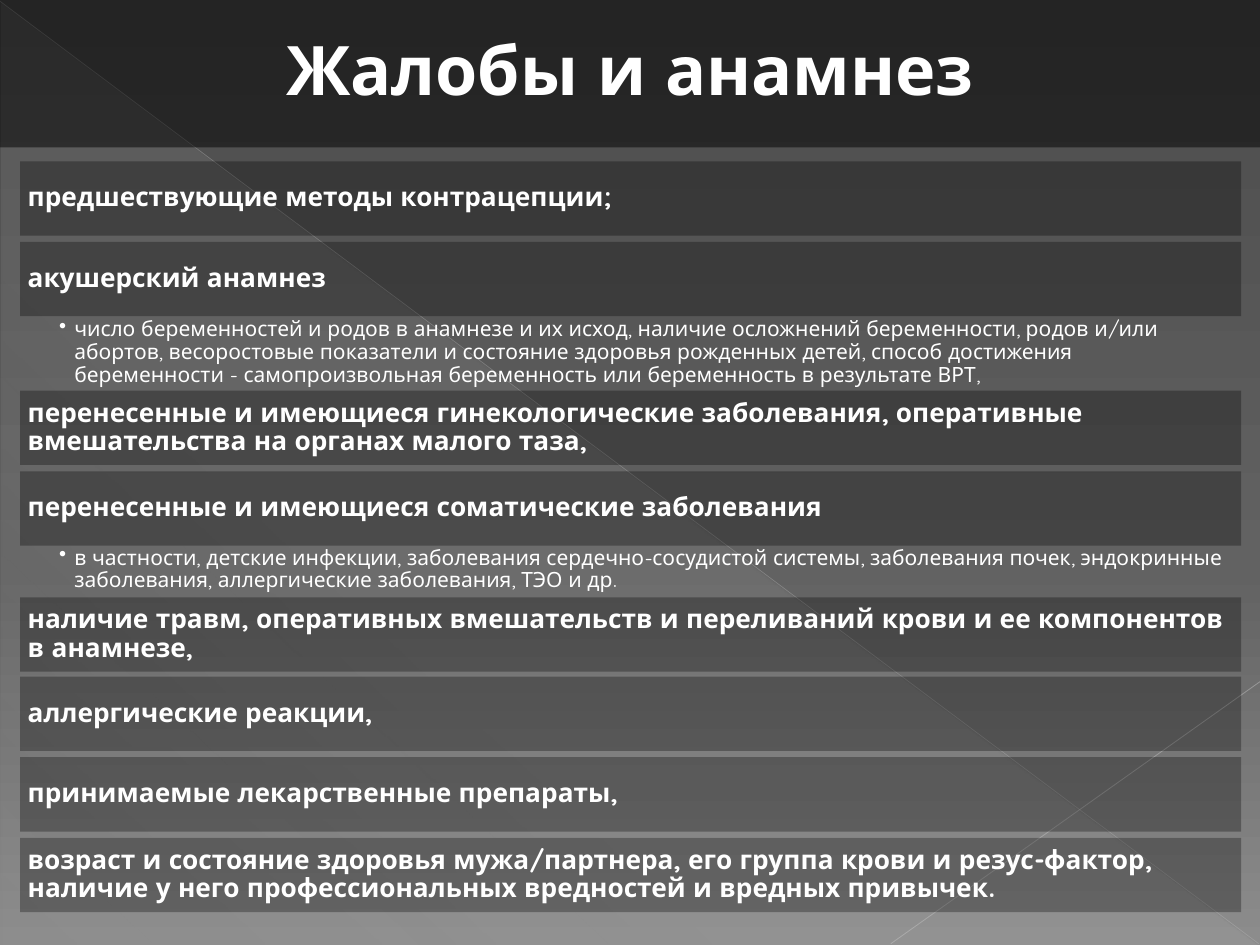
import pptx
import pptx.util
import pptx.dml.color
import pptx.enum.shapes
import pptx.enum.text
import pptx.oxml
import pptx.oxml.ns
from pptx.util import Inches

RGBColor = pptx.dml.color.RGBColor
WHITE = RGBColor(0xFF, 0xFF, 0xFF)
BLACK = RGBColor(0x00, 0x00, 0x00)
DARK_GRAY = RGBColor(0x4A, 0x4A, 0x4A)
MID_GRAY = RGBColor(0x62, 0x62, 0x62)
LIGHT_GRAY = RGBColor(0x8C, 0x8C, 0x8C)
SHEEN = RGBColor(0xD2, 0xD2, 0xD2)
LONG_RAY = RGBColor(0xBF, 0xBF, 0xBF)
SHORT_RAY = RGBColor(0xC6, 0xC6, 0xC6)

FONT = "Quicksand"
LEFT, WIDTH, BAR_HEIGHT = 0.16, 9.69, 0.59
RECTANGLE = pptx.enum.shapes.MSO_SHAPE.RECTANGLE
qn = pptx.oxml.ns.qn


def write_text(shape, text, size, bold=True, align="LEFT", anchor="MIDDLE",
               insets=(0.06, 0.06, 0.06, 0.06), bullet_indent=None):
    frame = shape.text_frame
    frame.word_wrap = True
    frame.vertical_anchor = getattr(pptx.enum.text.MSO_ANCHOR, anchor)
    frame.margin_left, frame.margin_top, frame.margin_right, frame.margin_bottom = map(Inches, insets)
    paragraph = frame.paragraphs[0]
    paragraph.alignment = getattr(pptx.enum.text.PP_ALIGN, align)
    paragraph.line_spacing = 0.9
    run = paragraph.add_run()
    run.text = text
    run.font.name = FONT
    run.font.size = pptx.util.Pt(size)
    run.font.bold = bold
    run.font.color.rgb = WHITE
    if bullet_indent:
        properties = paragraph._p.get_or_add_pPr()
        properties.set("marL", str(Inches(bullet_indent)))
        properties.set("indent", str(-Inches(bullet_indent)))
        properties.append(pptx.oxml.parse_xml(
            f'<a:buChar {pptx.oxml.ns.nsdecls("a")} char="•"/>'))


def set_gradient(fill, element, angle, stops):
    fill.gradient()
    gradient = next(element.iter(qn("a:gradFill")))
    stop_xml = "".join(
        f'<a:gs pos="{position * 1000}"><a:srgbClr val="{color}">'
        f'<a:alpha val="{opacity * 1000}"/></a:srgbClr></a:gs>'
        for position, color, opacity in stops)
    gradient.replace(gradient.find(qn("a:gsLst")), pptx.oxml.parse_xml(
        f'<a:gsLst {pptx.oxml.ns.nsdecls("a")}>{stop_xml}</a:gsLst>'))
    gradient.find(qn("a:lin")).set("ang", str(angle * 60000))


presentation = pptx.Presentation()
presentation.slide_width = Inches(10)
presentation.slide_height = Inches(7.5)
slide = presentation.slides.add_slide(presentation.slide_layouts[6])
shapes = slide.shapes
translucent = []

set_gradient(slide.background.fill, slide._element, 90,
             [(0, DARK_GRAY, 100), (60, MID_GRAY, 100), (100, LIGHT_GRAY, 100)])

sheen = shapes.add_shape(pptx.enum.shapes.MSO_SHAPE.RIGHT_TRIANGLE,
                         Inches(0.01), Inches(0.02), Inches(9.98), Inches(7.48))
sheen.shadow.inherit = False
sheen.line.fill.background()
set_gradient(sheen.fill, sheen._element, 133,
             [(0, SHEEN, 10), (70, SHEEN, 8), (100, SHEEN, 1)])

rays = [
    ((0, 0.01, 9.99, 7.49), LONG_RAY, 0.39, 35),
    ((10, 5.41, 7.07, 7.49), SHORT_RAY, 0.47, 45),
]
for ends, color, weight, opacity in rays:
    ray = shapes.add_connector(pptx.enum.shapes.MSO_CONNECTOR.STRAIGHT, *map(Inches, ends))
    ray.line.color.rgb = color
    ray.line.width = pptx.util.Pt(weight)
    ray._element.spPr.append(pptx.oxml.parse_xml(
        f'<a:effectLst {pptx.oxml.ns.nsdecls("a")}/>'))
    translucent.append((ray, opacity))

topics = [
    (1.28, "предшествующие методы контрацепции;"),
    (1.92, "акушерский анамнез"),
    (3.1, "перенесенные и имеющиеся гинекологические заболевания, оперативные вмешательства на органах малого таза,"),
    (3.74, "перенесенные и имеющиеся соматические заболевания"),
    (4.74, "наличие травм, оперативных вмешательств и переливаний крови и ее компонентов в анамнезе,"),
    (5.37, "аллергические реакции,"),
    (6.01, "принимаемые лекарственные препараты,"),
    (6.65, "возраст и состояние здоровья мужа/партнера, его группа крови и резус-фактор, наличие у него профессиональных вредностей и вредных привычек."),
]
bands = [(LEFT, top, WIDTH, BAR_HEIGHT, 30, text, {"size": 15}) for top, text in topics]
bands.append((0, 0, 10, 1.17, 50, "Жалобы и анамнез",
              {"size": 39, "align": "CENTER", "insets": (0.16, 0.16, 0.16, 0.16)}))
for left, top, width, height, opacity, text, text_format in bands:
    band = shapes.add_shape(RECTANGLE, Inches(left), Inches(top), Inches(width), Inches(height))
    band.shadow.inherit = False
    band.fill.solid()
    band.fill.fore_color.rgb = BLACK
    band.line.fill.background()
    write_text(band, text, **text_format)
    translucent.append((band, opacity))

details = [
    (2.51, 0.59, "число беременностей и родов в анамнезе и их исход, наличие осложнений беременности, родов и/или абортов, весоростовые показатели и состояние здоровья рожденных детей, способ достижения беременности - самопроизвольная беременность или беременность в результате ВРТ,"),
    (4.32, 0.42, "в частности, детские инфекции, заболевания сердечно-сосудистой системы, заболевания почек, эндокринные заболевания, аллергические заболевания, ТЭО и др."),
]
for top, height, text in details:
    detail = shapes.add_textbox(Inches(LEFT), Inches(top), Inches(WIDTH), Inches(height))
    write_text(detail, text, size=12, bold=False, anchor="TOP",
               insets=(0.31, 0.02, 0.12, 0.02), bullet_indent=0.12)

for shape, opacity in translucent:
    color = next(shape._element.spPr.iter(qn("a:srgbClr")))
    color.append(pptx.oxml.parse_xml(
        f'<a:alpha {pptx.oxml.ns.nsdecls("a")} val="{opacity * 1000}"/>'))

presentation.save("out.pptx")
